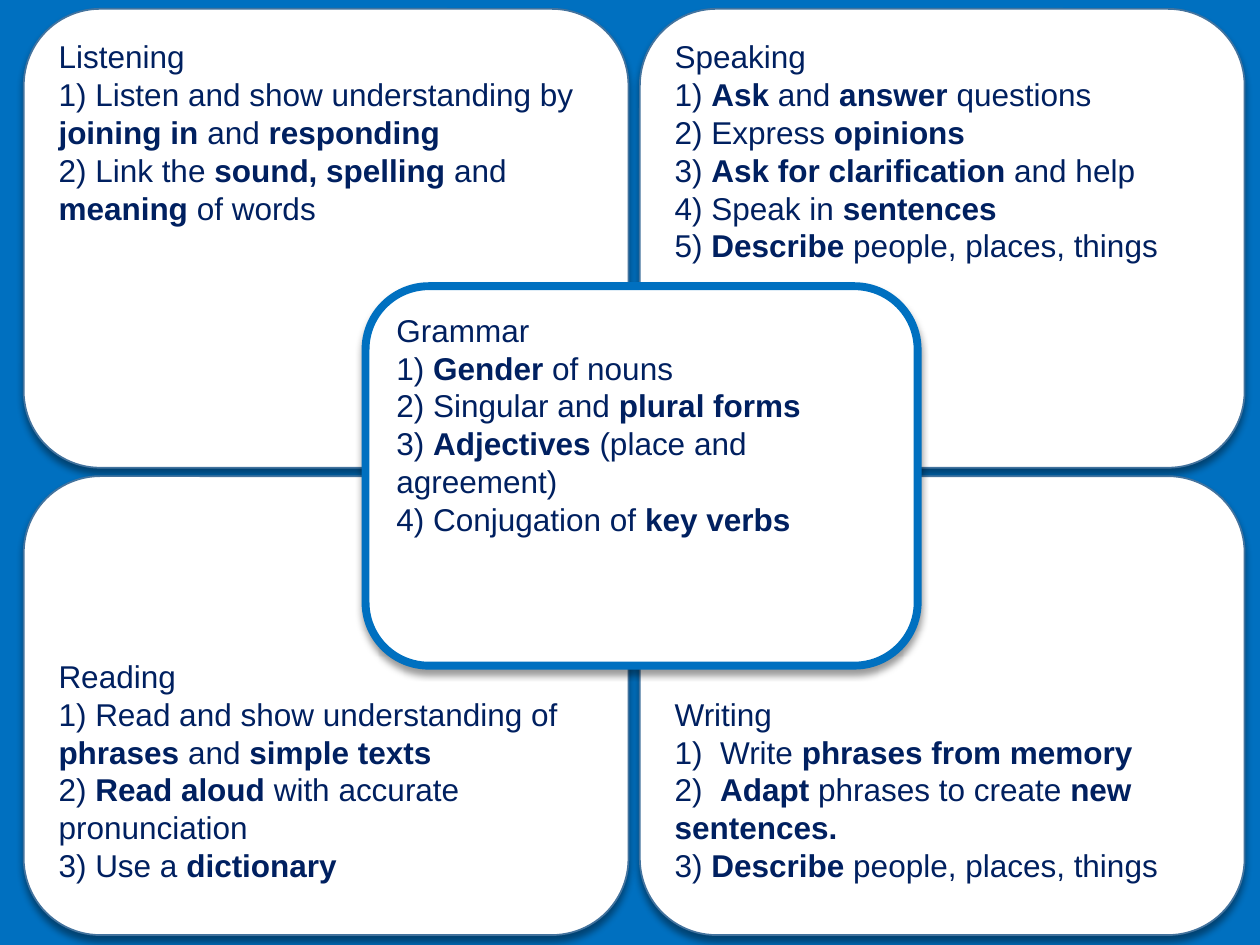
from lxml import etree
from pptx import Presentation
from pptx.dml.color import RGBColor
from pptx.enum.shapes import MSO_SHAPE
from pptx.enum.text import MSO_ANCHOR, PP_ALIGN
from pptx.oxml.ns import qn
from pptx.util import Cm, Pt

ROUND = MSO_SHAPE.ROUNDED_RECTANGLE
TOP, BOTTOM = MSO_ANCHOR.TOP, MSO_ANCHOR.BOTTOM
LEFT = PP_ALIGN.LEFT
BLUE, NAVY, WHITE, EDGE = "0070C0", "002060", "FFFFFF", "43739E"


def paint(fill, color):
    fill.solid()
    fill.fore_color.rgb = RGBColor.from_string(color)


def cast(shape):
    """Give the shape a soft black shadow straight below it."""
    shape.shadow.inherit = False
    effects = shape._element.spPr.find(qn("a:effectLst"))
    outer = etree.SubElement(effects, qn("a:outerShdw"), blurRad=str(Pt(4)),
                             dist=str(Pt(3)), dir="5400000", algn="t", rotWithShape="0")
    black = etree.SubElement(outer, qn("a:srgbClr"), val="000000")
    etree.SubElement(black, qn("a:alpha"), val="40000")


# Text between asterisks is bold
listen = """Listening
1) Listen and show understanding by *joining in* and *responding*
2) Link the *sound, spelling* and *meaning* of words"""
speak = """Speaking
1) *Ask* and *answer* questions
2) Express *opinions*
3) *Ask for clarification* and help
4) Speak in *sentences*
5) *Describe* people, places, things"""
read = """Reading
1) Read and show understanding of *phrases* and *simple texts*
2) *Read aloud* with accurate pronunciation
3) Use a *dictionary*"""
write = """Writing
1)  Write *phrases from memory*
2)  *Adapt* phrases to create *new sentences.*
3) *Describe* people, places, things"""
grammar = """Grammar
1) *Gender* of nouns
2) Singular and *plural forms*
3) *Adjectives* (place and agreement)
4) Conjugation of *key verbs*"""

wide, high = 12.19, 9.25
cols, rows = (0.48, 12.9), (0.18, 9.6)
cards = [
    (cols[0], rows[0], wide, high, EDGE, 1, TOP, listen),
    (cols[1], rows[0], wide, high, EDGE, 1, TOP, speak),
    (cols[0], rows[1], wide, high, EDGE, 1, BOTTOM, read),
    (cols[1], rows[1], wide, high, EDGE, 1, BOTTOM, write),
    (7.37, 5.77, 11.13, 7.65, BLUE, 4.5, TOP, grammar),
]

deck = Presentation()
deck.slide_width, deck.slide_height = Cm(25.4), Cm(19.05)
slide = deck.slides.add_slide(deck.slide_layouts[6])
paint(slide.background.fill, BLUE)

for x, y, w, h, edge, weight, anchor, text in cards:
    card = slide.shapes.add_shape(ROUND, Cm(x), Cm(y), Cm(w), Cm(h))
    paint(card.fill, WHITE)
    paint(card.line.fill, edge)
    card.line.width = Pt(weight)
    cast(card)
    frame = card.text_frame
    frame.word_wrap = True
    frame.vertical_anchor = anchor
    if anchor == BOTTOM:
        frame.margin_bottom = Cm(0.58)
    for i, line in enumerate(text.split("\n")):
        para = frame.add_paragraph() if i else frame.paragraphs[0]
        para.alignment = LEFT
        para.font.name, para.font.size = "Arial", Pt(18)
        paint(para.font.fill, NAVY)
        for k, part in enumerate(line.split("*")):
            if part:
                run = para.add_run()
                run.text = part
                run.font.bold = k % 2 == 1

deck.save("out.pptx")
